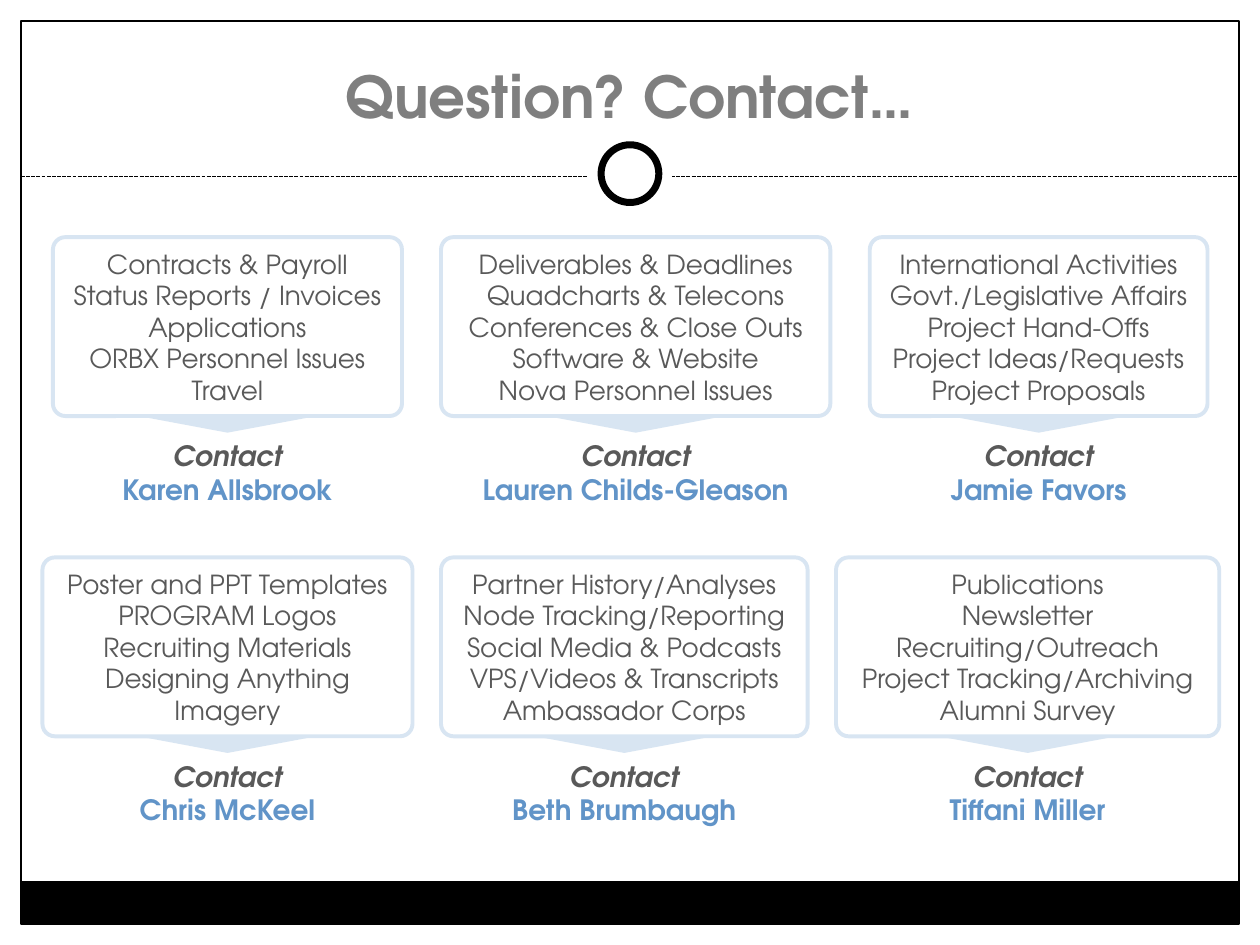
from lxml.etree import SubElement
from pptx import Presentation
from pptx.dml.color import RGBColor
from pptx.enum.dml import MSO_LINE
from pptx.enum.shapes import MSO_CONNECTOR, MSO_SHAPE
from pptx.enum.text import MSO_ANCHOR, MSO_AUTO_SIZE, PP_ALIGN
from pptx.oxml.ns import qn
from pptx.util import Pt

# Content: centre, card width, topics, contact name, contact width
TITLE = "Question? Contact…"
ROWS = [
    (135.5, [
        (130, 199.5, ["Contracts & Payroll", "Status Reports / Invoices", "Applications",
                      "ORBX Personnel Issues", "Travel"], "Karen Allsbrook", 137.5),
        (363.25, 222.5, ["Deliverables & Deadlines", "Quadcharts & Telecons",
                         "Conferences & Close Outs", "Software & Website",
                         "Nova Personnel Issues"], "Lauren Childs-Gleason", 192),
        (593.5, 193, ["International Activities", "Govt./Legislative Affairs",
                      "Project Hand-Offs", "Project Ideas/Requests",
                      "Project Proposals"], "Jamie Favors", 117.5),
    ]),
    (318.5, [
        (130, 211.5, ["Poster and PPT Templates", "PROGRAM Logos", "Recruiting Materials",
                      "Designing Anything", "Imagery"], "Chris McKeel", 117.5),
        (356.75, 209.5, ["Partner History/Analyses", "Node Tracking/Reporting",
                         "Social Media & Podcasts", "VPS/Videos & Transcripts",
                         "Ambassador Corps"], "Beth Brumbaugh", 144),
        (587.25, 219, ["Publications", "Newsletter", "Recruiting/Outreach",
                       "Project Tracking/Archiving", "Alumni Survey"], "Tiffani Miller", 105),
    ]),
]

FONT = "TeX Gyre Adventor"
BLACK = RGBColor(0x00, 0x00, 0x00)
WHITE = RGBColor(0xFF, 0xFF, 0xFF)
TITLE_GRAY = RGBColor(0x7F, 0x7F, 0x7F)
TEXT_GRAY = RGBColor(0x59, 0x59, 0x59)
PALE_BLUE = RGBColor(0xD8, 0xE5, 0xF2)
NAME_BLUE = RGBColor(0x61, 0x94, 0xC8)

PAGE_WIDTH, PAGE_HEIGHT = 720, 540
MARGIN = 12
RULE_Y = 101
CARD_HEIGHT = 102.25
POINTER_WIDTH, POINTER_HEIGHT = 101.5, 9.5
CONTACT_HEIGHT = 46


def write(para, text, *, size, color, bold=False, italic=False):
    para.alignment = PP_ALIGN.CENTER
    span = para.add_run()
    span.text = text
    span.font.name = FONT
    span.font.size = Pt(size)
    span.font.color.rgb = color
    span.font.bold = bold
    span.font.italic = italic


def next_para(frame, index):
    return frame.paragraphs[0] if index == 0 else frame.add_paragraph()


def draw(shapes, kind, left, top, width, height, fill=None, line=None, weight=0.75):
    shape = shapes.add_shape(kind, Pt(left), Pt(top), Pt(width), Pt(height))
    shape.shadow.inherit = False
    if fill is None:
        shape.fill.background()
    else:
        shape.fill.solid()
        shape.fill.fore_color.rgb = fill
    if line is None:
        shape.line.fill.background()
    else:
        shape.line.color.rgb = line
        shape.line.width = Pt(weight)
    return shape


def draw_ring(shapes, diameter, line=None):
    draw(shapes, MSO_SHAPE.OVAL, (PAGE_WIDTH - diameter) / 2, 99.25 - diameter / 2,
         diameter, diameter, fill=WHITE, line=line, weight=4)


def add_card(page, center, top, width, topics):
    group = page.shapes.add_group_shape()
    pointer = draw(group.shapes, MSO_SHAPE.ISOSCELES_TRIANGLE, center - POINTER_WIDTH / 2,
                   top + CARD_HEIGHT, POINTER_WIDTH, POINTER_HEIGHT, fill=PALE_BLUE)
    pointer.rotation = 180
    card = draw(group.shapes, MSO_SHAPE.ROUNDED_RECTANGLE, center - width / 2, top,
                width, CARD_HEIGHT, fill=WHITE, line=PALE_BLUE, weight=2.25)
    card.adjustments[0] = 0.07
    frame = card.text_frame
    frame.word_wrap = True
    frame.auto_size = MSO_AUTO_SIZE.SHAPE_TO_FIT_TEXT
    frame.vertical_anchor = MSO_ANCHOR.MIDDLE
    for index, topic in enumerate(topics):
        write(next_para(frame, index), topic, size=15, color=TEXT_GRAY)


def add_contact(page, center, top, width, name):
    box = page.shapes.add_textbox(Pt(center - width / 2), Pt(top), Pt(width), Pt(CONTACT_HEIGHT))
    frame = box.text_frame
    frame.word_wrap = False
    frame.auto_size = MSO_AUTO_SIZE.SHAPE_TO_FIT_TEXT
    write(next_para(frame, 0), "Contact", size=16, color=TEXT_GRAY, bold=True, italic=True)
    write(next_para(frame, 1), name, size=16, color=NAME_BLUE, bold=True)


def main():
    deck = Presentation()
    deck.slide_width, deck.slide_height = Pt(PAGE_WIDTH), Pt(PAGE_HEIGHT)
    page = deck.slides.add_slide(deck.slide_layouts[5])
    inner_width = PAGE_WIDTH - 2 * MARGIN

    # Page frame and footer band
    draw(page.shapes, MSO_SHAPE.RECTANGLE, MARGIN, 503.5, inner_width, 24.5, fill=BLACK)
    draw(page.shapes, MSO_SHAPE.RECTANGLE, MARGIN, MARGIN, inner_width,
         PAGE_HEIGHT - 2 * MARGIN, line=BLACK)

    # Dashed rule with a ring in the middle
    rule = page.shapes.add_connector(MSO_CONNECTOR.STRAIGHT, Pt(MARGIN), Pt(RULE_Y),
                                     Pt(PAGE_WIDTH - MARGIN), Pt(RULE_Y))
    rule.line.color.rgb = BLACK
    rule.line.width = Pt(0.75)
    rule.line.dash_style = MSO_LINE.SQUARE_DOT
    SubElement(rule._element.spPr, qn("a:effectLst"))
    draw_ring(page.shapes, 48)
    draw_ring(page.shapes, 33, line=BLACK)

    # Title
    title = page.shapes.title
    title.left, title.top, title.width, title.height = Pt(24), Pt(18), Pt(672), Pt(60)
    title.text_frame.vertical_anchor = MSO_ANCHOR.BOTTOM
    write(title.text_frame.paragraphs[0], TITLE, size=33, color=TITLE_GRAY, bold=True)

    # Topic cards, each with its contact below
    for top, cards in ROWS:
        for center, width, topics, name, contact_width in cards:
            add_card(page, center, top, width, topics)
            add_contact(page, center, top + CARD_HEIGHT + POINTER_HEIGHT, contact_width, name)

    deck.save("out.pptx")


if __name__ == "__main__":
    main()
